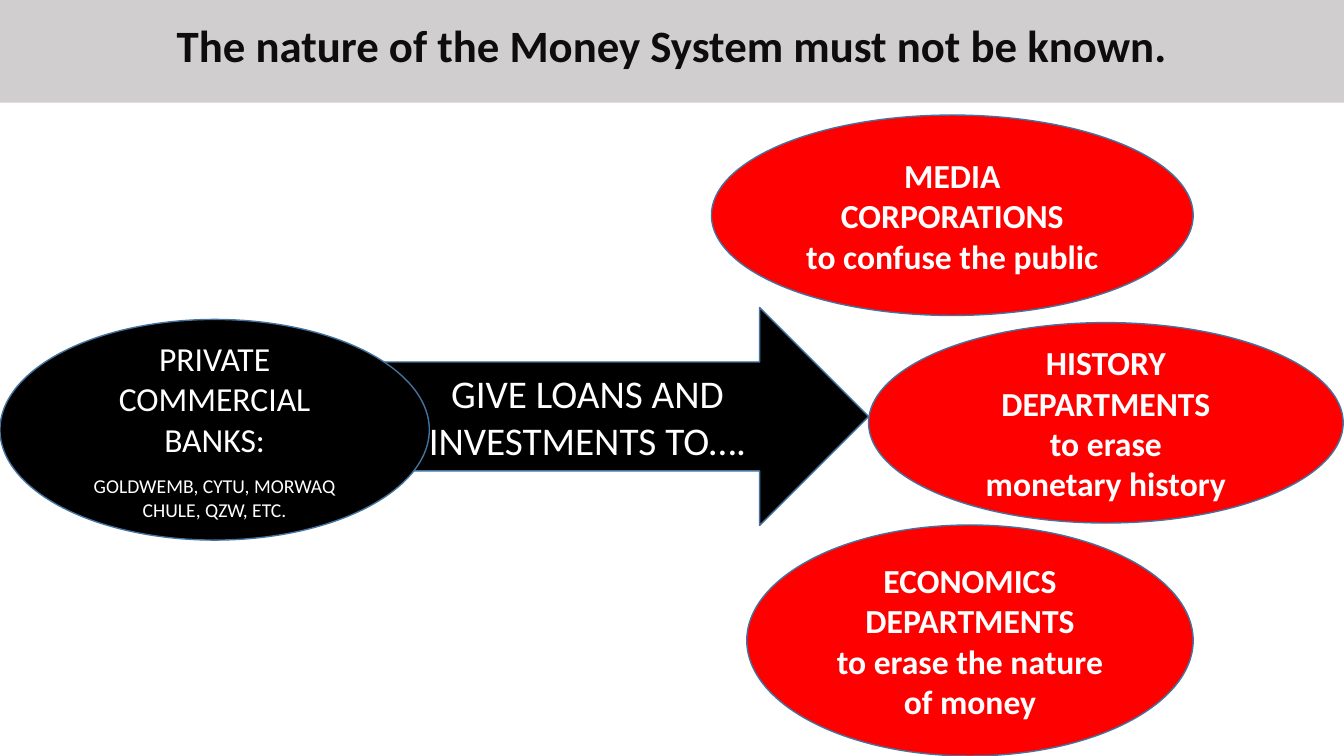
from pptx import Presentation
from pptx.dml.color import RGBColor
from pptx.enum.shapes import MSO_SHAPE as Shape
from pptx.enum.text import MSO_ANCHOR as Anchor, MSO_AUTO_SIZE as AutoSize, PP_ALIGN as Align
from pptx.util import Cm, Pt

TITLE = "The nature of the Money System must not be known."
TITLE_PLACE = (0, -0.18, 33.87, 2.77)
FLOW = ["GIVE LOANS AND INVESTMENTS TO…."]
FLOW_PLACE = (9.09, 7.75, 12.8, 5.49)
BANKS = ["PRIVATE COMMERCIAL BANKS:"]
BANK_NAMES = ["GOLDWEMB, CYTU, MORWAQ CHULE, QZW, ETC."]
BANKS_PLACE = (0, 8.05, 10.82, 5.56)
RECEIVERS = [
    ((18.82, 13.23, 11.25, 5.82), ["ECONOMICS DEPARTMENTS", "to erase the nature of money"]),
    ((21.89, 8.13, 11.96, 5.05), ["HISTORY DEPARTMENTS", "to erase", "monetary history"]),
    ((17.93, 2.9, 12.14, 5.05), ["MEDIA CORPORATIONS", "to confuse the public"]),
]
BLACK, RED, WHITE, GREY, INK, OUTLINE = "000000", "FF0000", "FFFFFF", "D0CECE", "0D0D0D", "43739E"


def paint(fill, color):
    fill.solid()
    fill.fore_color.rgb = RGBColor.from_string(color)


def write(frame, lines, size, color=WHITE, bold=False, spacing=1.0, before=0, append=False):
    frame.word_wrap = True
    frame.auto_size = AutoSize.NONE
    frame.vertical_anchor = Anchor.MIDDLE
    for index, line in enumerate(lines):
        para = frame.add_paragraph() if append or index else frame.paragraphs[0]
        para.alignment = Align.CENTER
        para.line_spacing = spacing
        para.space_before = Pt(before)
        span = para.add_run()
        span.text = line
        span.font.name = "Calibri"
        span.font.size = Pt(size)
        span.font.bold = bold
        paint(span.font.fill, color)


def add_figure(page, kind, place, color):
    figure = page.shapes.add_shape(kind, *map(Cm, place))
    figure.shadow.inherit = False
    paint(figure.fill, color)
    paint(figure.line.fill, OUTLINE)
    figure.line.width = Pt(1)
    return figure.text_frame


def main():
    deck = Presentation()
    deck.slide_width, deck.slide_height = Cm(33.87), Cm(19.05)
    page = deck.slides.add_slide(deck.slide_layouts[5])

    title = page.shapes.title
    title.left, title.top, title.width, title.height = map(Cm, TITLE_PLACE)
    paint(title.fill, GREY)
    write(title.text_frame, [TITLE], 32, color=INK, bold=True, spacing=0.9)

    write(add_figure(page, Shape.RIGHT_ARROW, FLOW_PLACE, BLACK), FLOW, 28)
    for place, lines in RECEIVERS:
        write(add_figure(page, Shape.OVAL, place, RED), lines, 24, bold=True)
    banks = add_figure(page, Shape.OVAL, BANKS_PLACE, BLACK)
    write(banks, BANKS, 24)
    write(banks, BANK_NAMES, 14, before=11, append=True)

    deck.save("out.pptx")


if __name__ == "__main__":
    main()
